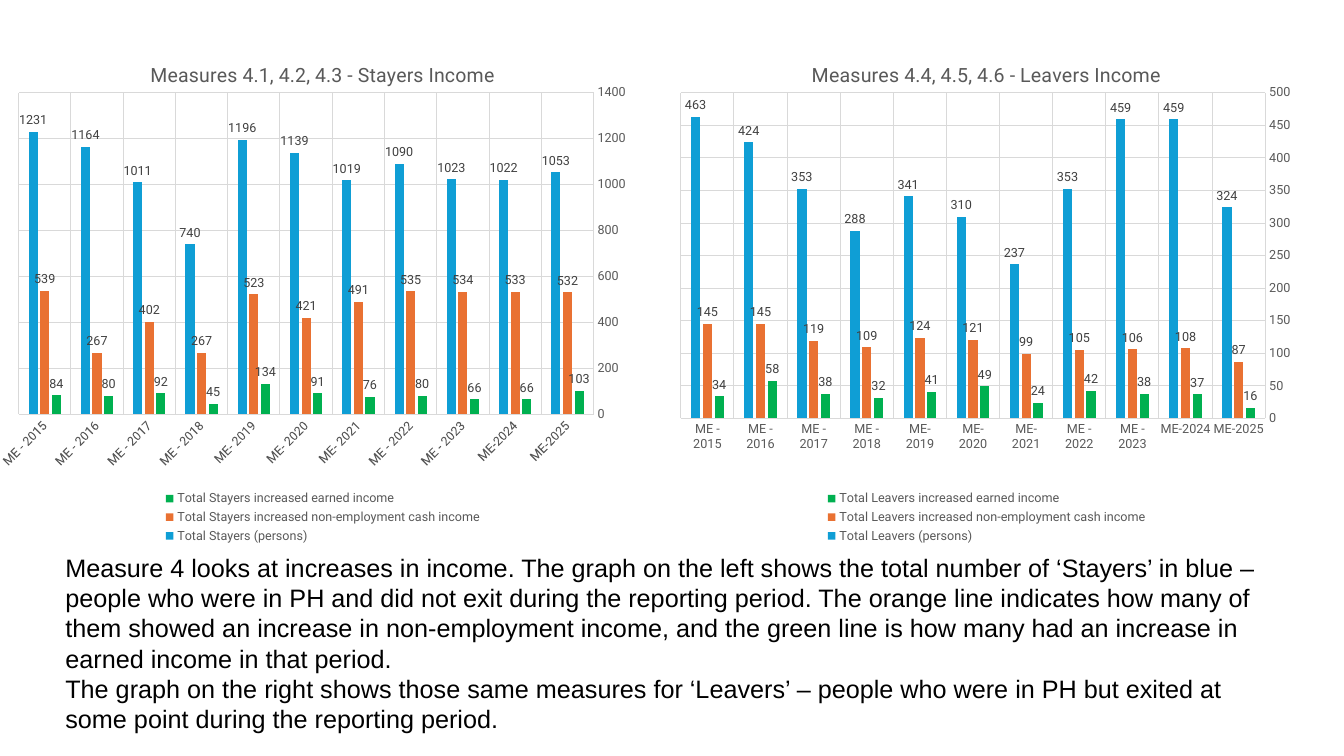
import pptx
import pptx.chart.data
import pptx.dml.color
import pptx.enum.chart
import pptx.enum.text
import pptx.oxml
import pptx.oxml.ns
import pptx.util

Inches = pptx.util.Inches
Pt = pptx.util.Pt
enums = pptx.enum.chart

COLORS = {
    "black": "000000", "text": "595959", "label": "404040", "grid": "D9D9D9",
    "green": "00B050", "orange": "E97132", "blue": "0F9ED5",
}
YEARS = ["ME-2025", "ME-2024", "ME - 2023", "ME - 2022", "ME- 2021", "ME- 2020",
         "ME- 2019", "ME - 2018", "ME - 2017", "ME - 2016", "ME - 2015"]
SERIES = [("Total {} increased earned income", "green"),
          ("Total {} increased non-employment cash income", "orange"),
          ("Total {} (persons)", "blue")]
STAYERS = [
    [103, 66, 66, 80, 76, 91, 134, 45, 92, 80, 84],
    [532, 533, 534, 535, 491, 421, 523, 267, 402, 267, 539],
    [1053, 1022, 1023, 1090, 1019, 1139, 1196, 740, 1011, 1164, 1231],
]
LEAVERS = [
    [16, 37, 38, 42, 24, 49, 41, 32, 38, 58, 34],
    [87, 108, 106, 105, 99, 121, 124, 109, 119, 145, 145],
    [324, 459, 459, 353, 237, 310, 341, 288, 353, 424, 463],
]
NOTES = [
    "Measure 4 looks at increases in income. The graph on the left shows the total "
    "number of ‘Stayers’ in blue – people who were in PH and did not exit during the "
    "reporting period. The orange line indicates how many of them showed an increase "
    "in non-employment income, and the green line is how many had an increase in "
    "earned income in that period.",
    "The graph on the right shows those same measures for ‘Leavers’ – people who were "
    "in PH but exited at some point during the reporting period.",
]


def rgb(name):
    return pptx.dml.color.RGBColor.from_string(COLORS[name])


class Page:
    """Holds the style and the current slide."""

    def __init__(self, slide):
        self.slide = slide
        self.face = "Roboto"

    def style(self, font, size, color, face=None):
        font.name = face or self.face
        font.size = Pt(size)
        font.bold = False
        font.color.rgb = rgb(color)

    def line(self, form):
        form.line.color.rgb = rgb("grid")
        form.line.width = Pt(0.75)

    def axis(self, axis):
        axis.has_major_gridlines = True
        self.line(axis.major_gridlines.format)
        axis.major_tick_mark = enums.XL_TICK_MARK.NONE
        axis.minor_tick_mark = enums.XL_TICK_MARK.NONE
        self.style(axis.tick_labels.font, 9, "text")

    def layout(self, chart, width, height):
        """Fix the inner plot area as fractions of the chart."""
        area = chart._chartSpace.chart.plotArea
        for old in area.findall(pptx.oxml.ns.qn("c:layout")):
            area.remove(old)
        parts = [("layoutTarget", "inner"), ("xMode", "edge"), ("yMode", "edge"),
                 ("x", 0.024), ("y", 0.1), ("w", width), ("h", height)]
        body = "".join(f'<c:{tag} val="{val}"/>' for tag, val in parts)
        area.insert(0, pptx.oxml.parse_xml(
            f'<c:layout {pptx.oxml.ns.nsdecls("c")}>'
            f"<c:manualLayout>{body}</c:manualLayout></c:layout>"))

    def chart(self, left, title, group, rows, top, step, width, height):
        data = pptx.chart.data.CategoryChartData()
        data.categories = YEARS
        for (name, _), row in zip(SERIES, rows):
            data.add_series(name.format(group), row)
        chart = self.slide.shapes.add_chart(
            enums.XL_CHART_TYPE.COLUMN_CLUSTERED, Inches(left), Inches(0.42),
            Inches(6.37), Inches(5.01), data).chart
        self.style(chart.font, 10, "black")

        # Title and legend
        chart.has_title = True
        chart.chart_title.include_in_layout = False
        head = chart.chart_title.text_frame
        head.text = title
        self.style(head.paragraphs[0].font, 14, "text")
        chart.has_legend = True
        chart.legend.position = enums.XL_LEGEND_POSITION.BOTTOM
        chart.legend.include_in_layout = False
        self.style(chart.legend.font, 9, "text")

        # Axes
        self.axis(chart.category_axis)
        self.line(chart.category_axis.format)
        chart.category_axis.reverse_order = True
        self.axis(chart.value_axis)
        chart.value_axis.format.line.fill.background()
        chart.value_axis.minimum_scale = 0
        chart.value_axis.maximum_scale = top
        chart.value_axis.major_unit = step

        # Columns and their labels
        plot = chart.plots[0]
        plot.gap_width = 219
        plot.overlap = -27
        plot.vary_by_categories = False
        for series, (_, color) in zip(plot.series, SERIES):
            series.format.fill.solid()
            series.format.fill.fore_color.rgb = rgb(color)
            labels = series.data_labels
            labels.show_value = True
            labels.position = enums.XL_LABEL_POSITION.OUTSIDE_END
            self.style(labels.font, 9, "label")
        self.layout(chart, width, height)

    def text(self, left, top, width, height, lines):
        box = self.slide.shapes.add_textbox(
            Inches(left), Inches(top), Inches(width), Inches(height))
        frame = box.text_frame
        frame.word_wrap = True
        frame.auto_size = pptx.enum.text.MSO_AUTO_SIZE.SHAPE_TO_FIT_TEXT
        frame.text = "\n".join(lines)
        for para in frame.paragraphs:
            self.style(para.font, 18, "black", "Arial")


def main():
    deck = pptx.Presentation()
    deck.slide_width = Inches(13.33)
    deck.slide_height = Inches(7.5)
    page = Page(deck.slides.add_slide(deck.slide_layouts[6]))

    # Income charts
    page.chart(0, "Measures 4.1, 4.2, 4.3 - Stayers Income", "Stayers", STAYERS,
               1400, 200, 0.9, 0.637)
    page.chart(6.6, "Measures 4.4, 4.5, 4.6 - Leavers Income", "Leavers", LEAVERS,
               500, 50, 0.91, 0.645)

    # Explanation
    page.text(0.55, 5.43, 12.22, 1.62, NOTES)
    deck.save("out.pptx")


if __name__ == "__main__":
    main()
